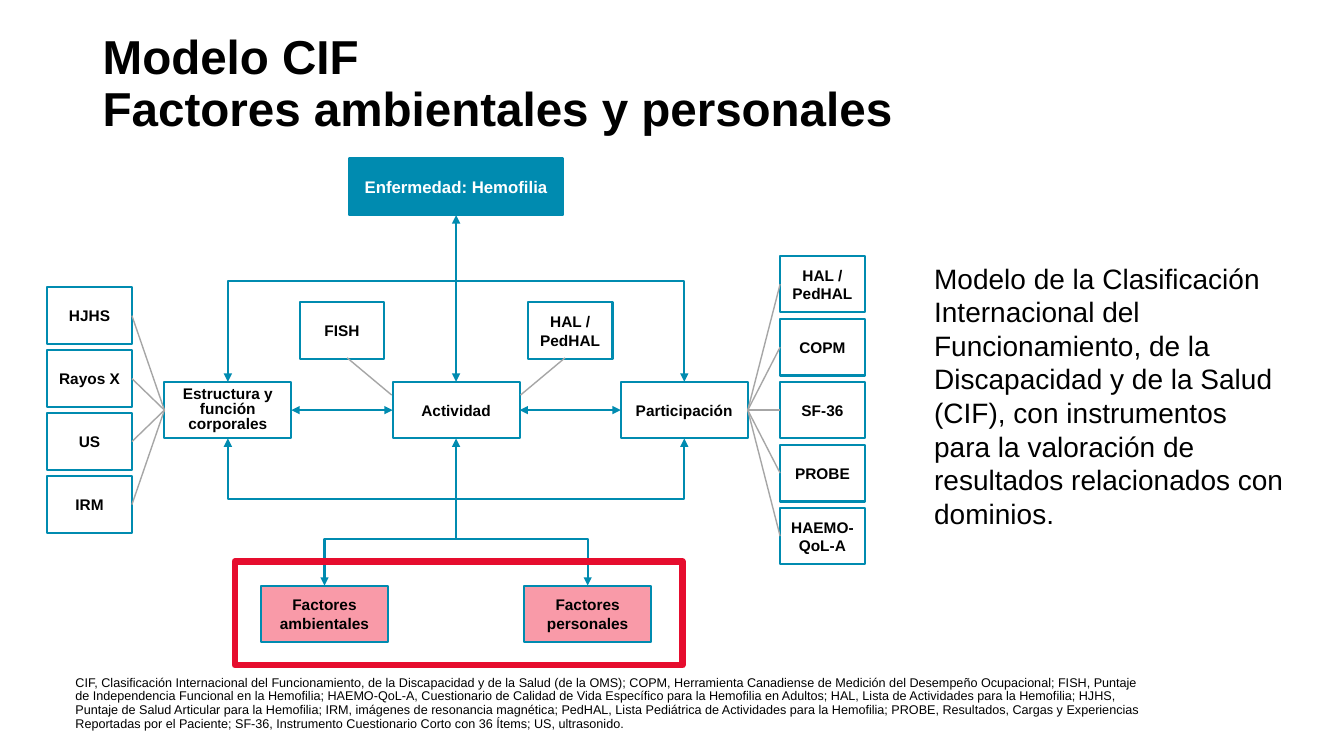
from copy import deepcopy
from dataclasses import dataclass

from lxml import etree
from pptx import Presentation
from pptx.dml.color import RGBColor
from pptx.enum import shapes, text
from pptx.oxml import ns
from pptx.util import Pt


@dataclass(frozen=True)
class Theme:
    font: str = "Arial"
    black: str = "000000"
    white: str = "FFFFFF"
    teal: str = "008BB0"
    pink: str = "F99AA8"
    red: str = "E60D2E"
    grey: str = "A6A6A6"
    title_size: float = 34
    body_size: float = 20
    heading_size: float = 12
    box_size: float = 11
    note_size: float = 9


THEME = Theme()


@dataclass(frozen=True)
class Box:
    label: str
    center: float
    top: float
    width: float
    fill: str = THEME.white
    color: str = THEME.black
    size: float = THEME.box_size
    spacing: float = 1.0


@dataclass(frozen=True)
class Elbow:
    joint: float  # height of the horizontal part
    offset: float  # distance of the arrow from the centre line
    end: float


# Diagram grid, in points
CENTER, PITCH = 325.8, 163
ROW_TOP, BOX_HEIGHT = 272.7, 40.5
ROW_BOTTOM = ROW_TOP + BOX_HEIGHT
DOMAIN_WIDTH, TOOL_WIDTH, STACK_PITCH = 90.7, 60.5, 45
FACTOR_TOP, FACTOR_OFFSET, FACTOR_JOINT = 418.3, 94, 385.2

DISEASE = Box("Enfermedad: Hemofilia", CENTER, 113.2, 152.6,
              THEME.teal, THEME.white, THEME.heading_size)
DOMAINS = [
    Box("Estructura y función corporales", CENTER - PITCH, ROW_TOP, DOMAIN_WIDTH, spacing=0.8),
    Box("Actividad", CENTER, ROW_TOP, DOMAIN_WIDTH),
    Box("Participación", CENTER + PITCH, ROW_TOP, DOMAIN_WIDTH),
]
FACTORS = [
    Box("Factores ambientales", CENTER - FACTOR_OFFSET, FACTOR_TOP, DOMAIN_WIDTH, THEME.pink),
    Box("Factores personales", CENTER + FACTOR_OFFSET, FACTOR_TOP, DOMAIN_WIDTH, THEME.pink),
]
ACTIVITY_TOOLS = [
    Box("FISH", CENTER - PITCH / 2, 216, TOOL_WIDTH),
    Box("HAL / PedHAL", CENTER + PITCH / 2, 216, TOOL_WIDTH),
]
STRUCTURE_TOOLS = [
    Box(label, 64, 205.2 + index * STACK_PITCH, TOOL_WIDTH)
    for index, label in enumerate(["HJHS", "Rayos X", "US", "IRM"])
]
PARTICIPATION_TOOLS = [
    Box(label, 587.5, ROW_TOP + (index - 2) * STACK_PITCH, TOOL_WIDTH)
    for index, label in enumerate(["HAL / PedHAL", "COPM", "SF-36", "PROBE", "HAEMO-QoL-A"])
]
ELBOWS = [
    Elbow(joint, side * offset, end)
    for joint, offset, end in [(200.9, PITCH, ROW_TOP), (356.4, PITCH, ROW_BOTTOM),
                               (FACTOR_JOINT, FACTOR_OFFSET, FACTOR_TOP)]
    for side in (-1, 1)
]

BODY = ("Modelo de la Clasificación Internacional del Funcionamiento, de la Discapacidad "
        "y de la Salud (CIF), con instrumentos para la valoración de resultados "
        "relacionados con dominios.")
NOTE = ("CIF, Clasificación Internacional del Funcionamiento, de la Discapacidad y de la Salud "
        "(de la OMS); COPM, Herramienta Canadiense de Medición del Desempeño Ocupacional; "
        "FISH, Puntaje de Independencia Funcional en la Hemofilia; HAEMO-QoL-A, Cuestionario "
        "de Calidad de Vida Específico para la Hemofilia en Adultos; HAL, Lista de Actividades "
        "para la Hemofilia; HJHS, Puntaje de Salud Articular para la Hemofilia; IRM, imágenes "
        "de resonancia magnética; PedHAL, Lista Pediátrica de Actividades para la Hemofilia; "
        "PROBE, Resultados, Cargas y Experiencias Reportadas por el Paciente; SF-36, "
        "Instrumento Cuestionario Corto con 36 Ítems; US, ultrasonido.")


def rgb(value: str) -> RGBColor:
    return RGBColor.from_string(value)


def write(shape, content: str, *, size: float, color: str = THEME.black, bold: bool = False,
          align=text.PP_ALIGN.LEFT, anchor=text.MSO_ANCHOR.MIDDLE, spacing: float = 1.0,
          auto_size=text.MSO_AUTO_SIZE.NONE) -> None:
    frame = shape.text_frame
    frame.word_wrap = True
    frame.auto_size = auto_size
    frame.vertical_anchor = anchor
    paragraph = frame.paragraphs[0]
    paragraph.text = content
    paragraph.alignment = align
    paragraph.line_spacing = spacing
    for run in paragraph.runs:
        run.font.name = THEME.font
        run.font.size = Pt(size)
        run.font.bold = bold
        run.font.color.rgb = rgb(color)
    # Line breaks take the size of the text around them
    for line_break in paragraph._p.findall(ns.qn("a:br")):
        line_break.append(deepcopy(paragraph.runs[0]._r.rPr))


def style_line(shape, color: str, width: float, ends: tuple[str, ...] = ()) -> None:
    shape.line.color.rgb = rgb(color)
    shape.line.width = Pt(width)
    outline = shape._element.spPr.find(ns.qn("a:ln"))
    for end in ends:
        etree.SubElement(outline, ns.qn(f"a:{end}"), type="triangle")


def draw_box(slide, box: Box):
    shape = slide.shapes.add_shape(shapes.MSO_SHAPE.RECTANGLE, Pt(box.center - box.width / 2),
                                   Pt(box.top), Pt(box.width), Pt(BOX_HEIGHT))
    shape.shadow.inherit = False
    shape.fill.solid()
    shape.fill.fore_color.rgb = rgb(box.fill)
    style_line(shape, THEME.teal, 1.5)
    write(shape, box.label, size=box.size, color=box.color, bold=True,
          align=text.PP_ALIGN.CENTER, spacing=box.spacing)
    return shape


def draw_line(slide, *, start=None, finish=None, points=(0, 0, 0, 0), color: str = THEME.grey,
              width: float = 1, ends: tuple[str, ...] = ()) -> None:
    """Start and finish are (shape, side) pairs that replace the given points."""
    connector = slide.shapes.add_connector(shapes.MSO_CONNECTOR.STRAIGHT, *map(Pt, points))
    if start:
        connector.begin_connect(*start)
    if finish:
        connector.end_connect(*finish)
    style_line(connector, color, width, ends)
    etree.SubElement(connector._element.spPr, ns.qn("a:effectLst"))


def draw_elbow(slide, elbow: Elbow) -> None:
    side = Pt(CENTER + elbow.offset)
    builder = slide.shapes.build_freeform(Pt(CENTER), Pt(elbow.joint))
    builder.add_line_segments([(side, Pt(elbow.joint)), (side, Pt(elbow.end))], close=False)
    shape = builder.convert_to_shape()
    shape.shadow.inherit = False
    shape.fill.background()
    style_line(shape, THEME.teal, 1.5, ("tailEnd",))


def draw_diagram(slide) -> None:
    # Boxes
    disease = draw_box(slide, DISEASE)
    structure, activity, participation = [draw_box(slide, box) for box in DOMAINS]
    structure_tools = [draw_box(slide, box) for box in STRUCTURE_TOOLS]
    participation_tools = [draw_box(slide, box) for box in PARTICIPATION_TOOLS]
    for box in FACTORS + ACTIVITY_TOOLS:
        draw_box(slide, box)

    # Arrows between the domains
    for start, finish in [((disease, 2), (activity, 0)), ((structure, 3), (activity, 1)),
                          ((activity, 3), (participation, 1))]:
        draw_line(slide, start=start, finish=finish, color=THEME.teal, width=1.5,
                  ends=("headEnd", "tailEnd"))
    draw_line(slide, points=(CENTER, ROW_BOTTOM, CENTER, FACTOR_JOINT), start=(activity, 2),
              color=THEME.teal, width=1.5, ends=("headEnd",))
    for elbow in ELBOWS:
        draw_elbow(slide, elbow)

    # Thin lines to the instruments
    for tool in structure_tools:
        draw_line(slide, start=(tool, 3), finish=(structure, 1))
    for tool in participation_tools:
        draw_line(slide, start=(participation, 3), finish=(tool, 1))
    for side in (-1, 1):
        draw_line(slide, points=(CENTER + side * 77.8, 255.6, CENTER + side * 46, 282.2))

    # Red frame around the factors
    frame = slide.shapes.add_shape(shapes.MSO_SHAPE.RECTANGLE,
                                   Pt(167.8), Pt(401), Pt(319.7), Pt(74.2))
    frame.shadow.inherit = False
    frame.fill.background()
    style_line(frame, THEME.red, 4.5)


def main() -> None:
    presentation = Presentation()
    presentation.slide_width, presentation.slide_height = Pt(960), Pt(540)
    slide = presentation.slides.add_slide(presentation.slide_layouts.get_by_name("Title Only"))

    # Title
    title = slide.shapes.title
    title.left, title.top, title.width, title.height = map(Pt, (66.2, 18, 828, 85.7))
    write(title, "Modelo CIF\nFactores ambientales y personales",
          size=THEME.title_size, bold=True, spacing=0.9)

    draw_diagram(slide)

    # Description and abbreviations
    body = slide.shapes.add_textbox(Pt(660.2), Pt(182.9), Pt(266.4), Pt(200.9))
    write(body, BODY, size=THEME.body_size, anchor=text.MSO_ANCHOR.TOP,
          auto_size=text.MSO_AUTO_SIZE.SHAPE_TO_FIT_TEXT)
    note = slide.shapes.add_textbox(Pt(46.8), Pt(493.2), Pt(781.2), Pt(28.8))
    note.text_frame.margin_bottom = 0
    write(note, NOTE, size=THEME.note_size, anchor=text.MSO_ANCHOR.BOTTOM, spacing=0.9)

    presentation.save("out.pptx")


if __name__ == "__main__":
    main()
